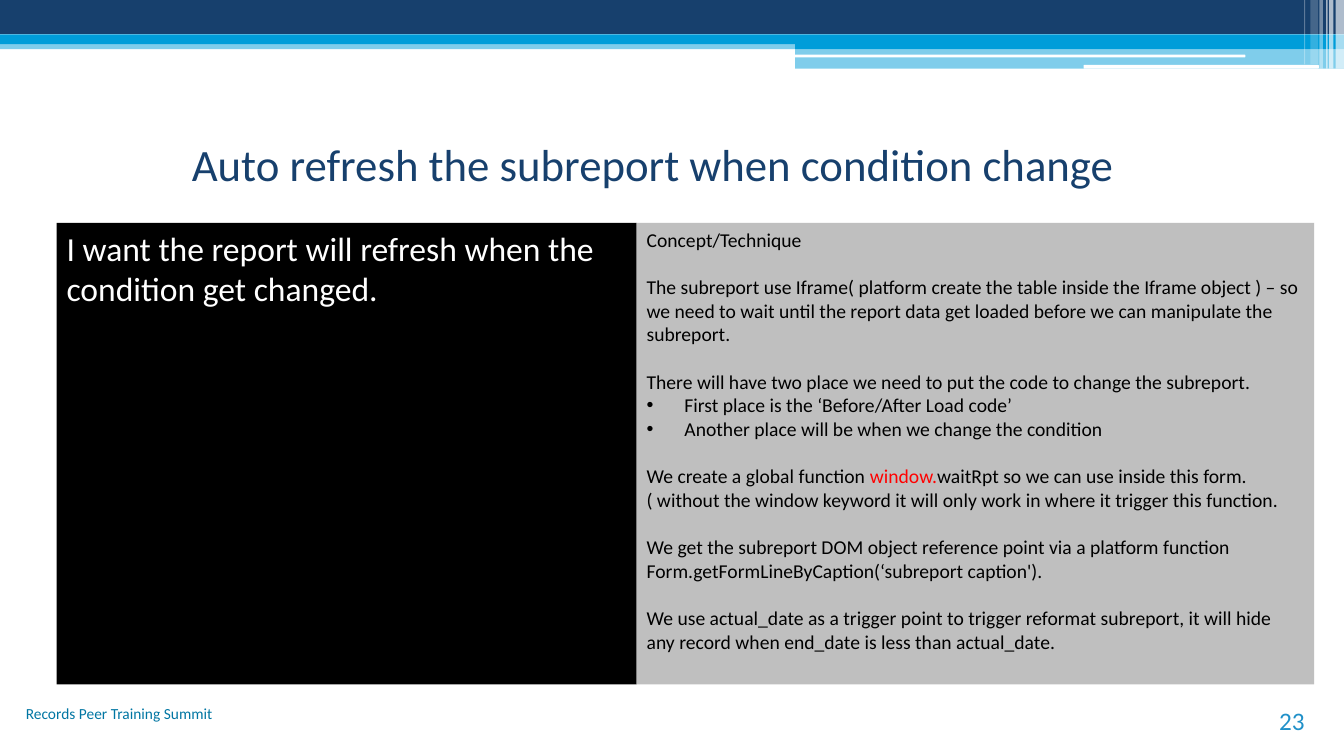
"""Build the slide about refreshing a subreport when its condition changes."""
import pptx
import pptx.util
import pptx.dml.color
import pptx.enum.shapes
import pptx.enum.text
import pptx.oxml

Pt = pptx.util.Pt
RGBColor = pptx.dml.color.RGBColor
Shape = pptx.enum.shapes.MSO_SHAPE
Align = pptx.enum.text.PP_ALIGN
Anchor = pptx.enum.text.MSO_ANCHOR

NAVY = RGBColor(0x17, 0x40, 0x6D)
CYAN = RGBColor(0x00, 0x9D, 0xD9)
WHITE = RGBColor(0xFF, 0xFF, 0xFF)
BLACK = RGBColor(0x00, 0x00, 0x00)
GRAY = RGBColor(0xBF, 0xBF, 0xBF)
RED = RGBColor(0xFF, 0x00, 0x00)
TEAL = RGBColor(0x00, 0x76, 0xA3)
BLUE = RGBColor(0x21, 0x91, 0xC9)
DRAWING = "http://schemas.openxmlformats.org/drawingml/2006/main"
WIDTH, HEIGHT = 960, 540


def add_block(kind, bounds, color, opacity=100):
    block = page.shapes.add_shape(kind, *map(Pt, bounds))
    block.shadow.inherit = False
    block.line.fill.background()
    block.fill.solid()
    block.fill.fore_color.rgb = color
    if opacity < 100:
        tint = block.fill._xPr.find(f".//{{{DRAWING}}}srgbClr")
        tint.append(pptx.oxml.parse_xml(
            f'<a:alpha xmlns:a="{DRAWING}" val="{opacity * 1000}"/>'))
    return block


def add_span(para, text, size, color):
    span = para.add_run()
    span.text = text
    for name, value in {"name": "Calibri", "size": Pt(size)}.items():
        setattr(span.font, name, value)
    span.font.color.rgb = color


deck = pptx.Presentation()
deck.slide_width, deck.slide_height = Pt(WIDTH), Pt(HEIGHT)
page = deck.slides.add_slide(deck.slide_layouts[6])

bands = [
    ((0, 28.5, WIDTH, 6.6), CYAN, 50),
    ((0, 0, WIDTH, 24.5), NAVY, 100),
    ((0, 24.5, WIDTH, 7), CYAN, 100),
    ((568, 28, 392, 7), CYAN, 100),
    ((568, 35, 392, 14), CYAN, 50),
]
for bounds, color, opacity in bands:
    add_block(Shape.RECTANGLE, bounds, color, opacity)

for bounds in [(567.5, 39, 322, 2), (774, 46.4, 168, 2.6)]:
    add_block(Shape.ROUNDED_RECTANGLE, bounds, WHITE)

stripes = [
    (954, 6, 49, 65),
    (949.5, 3, 49, 65),
    (947.3, 1, 49, 60),
    (942.5, 2.5, 49, 40),
    (936, 5.5, 46, 20),
    (931.5, 0.8, 46, 30),
]
for left, width, height, opacity in stripes:
    add_block(Shape.RECTANGLE, (left, 0, width, height), WHITE, opacity)

request = add_block(Shape.RECTANGLE, (40.5, 159.3, 414.3, 329.5), BLACK)
concept = add_block(Shape.RECTANGLE, (454.8, 159.3, 483.9, 329.5), GRAY)

captions = [
    ((40.5, 75, 852, 84), "Auto refresh the subreport when condition change",
     32, NAVY, Align.CENTER, Anchor.MIDDLE),
    ((0, 499.7, 159, 36), "Records Peer Training Summit",
     11, TEAL, Align.RIGHT, Anchor.TOP),
    ((859, 500.5, 80, 28.8), "23", 18, BLUE, Align.RIGHT, Anchor.BOTTOM),
]
for bounds, text, size, color, align, anchor in captions:
    box = page.shapes.add_textbox(*map(Pt, bounds))
    box.text_frame.word_wrap = True
    box.text_frame.vertical_anchor = anchor
    para = box.text_frame.paragraphs[0]
    para.alignment = align
    add_span(para, text, size, color)

for panel in (request, concept):
    panel.text_frame.word_wrap = True
    panel.text_frame.vertical_anchor = Anchor.TOP

para = request.text_frame.paragraphs[0]
para.alignment = Align.LEFT
add_span(para, "I want the report will refresh when the condition get changed.",
         24, WHITE)

GAP = 17
notes = [
    (0, False, [("Concept/Technique", BLACK)]),
    (GAP, False, [("The subreport use Iframe( platform create the table inside the "
                   "Iframe object ) – so we need to wait until the report data get "
                   "loaded before we can manipulate the subreport.", BLACK)]),
    (GAP, False, [("There will have two place we need to put the code to change "
                   "the subreport.", BLACK)]),
    (0, True, [("First place is the ‘Before/After Load code’", BLACK)]),
    (0, True, [("Another place will be when we change the condition", BLACK)]),
    (GAP, False, [("We create a global function ", BLACK), ("window.", RED),
                  ("waitRpt so we can use inside this form. ( without the window "
                   "keyword it will only work in where it trigger this function.",
                   BLACK)]),
    (GAP, False, [("We get the subreport DOM object reference point via a platform "
                   "function Form.getFormLineByCaption(‘subreport caption').", BLACK)]),
    (GAP, False, [("We use actual_date as a trigger point to trigger reformat "
                   "subreport, it will hide any record when end_date is less than "
                   "actual_date.", BLACK)]),
]
for index, (gap, bulleted, spans) in enumerate(notes):
    frame = concept.text_frame
    para = frame.add_paragraph() if index else frame.paragraphs[0]
    para.alignment = Align.LEFT
    if gap:
        para.space_before = Pt(gap)
    if bulleted:
        layout = para._p.get_or_add_pPr()
        layout.set("marL", str(Pt(27)))
        layout.set("indent", str(Pt(-27)))
        for tag in ('buFont xmlns:a="%s" typeface="Arial"', 'buChar xmlns:a="%s" char="•"'):
            layout.append(pptx.oxml.parse_xml(f"<a:{tag % DRAWING}/>"))
    for text, color in spans:
        add_span(para, text, 14, color)

deck.save("out.pptx")
